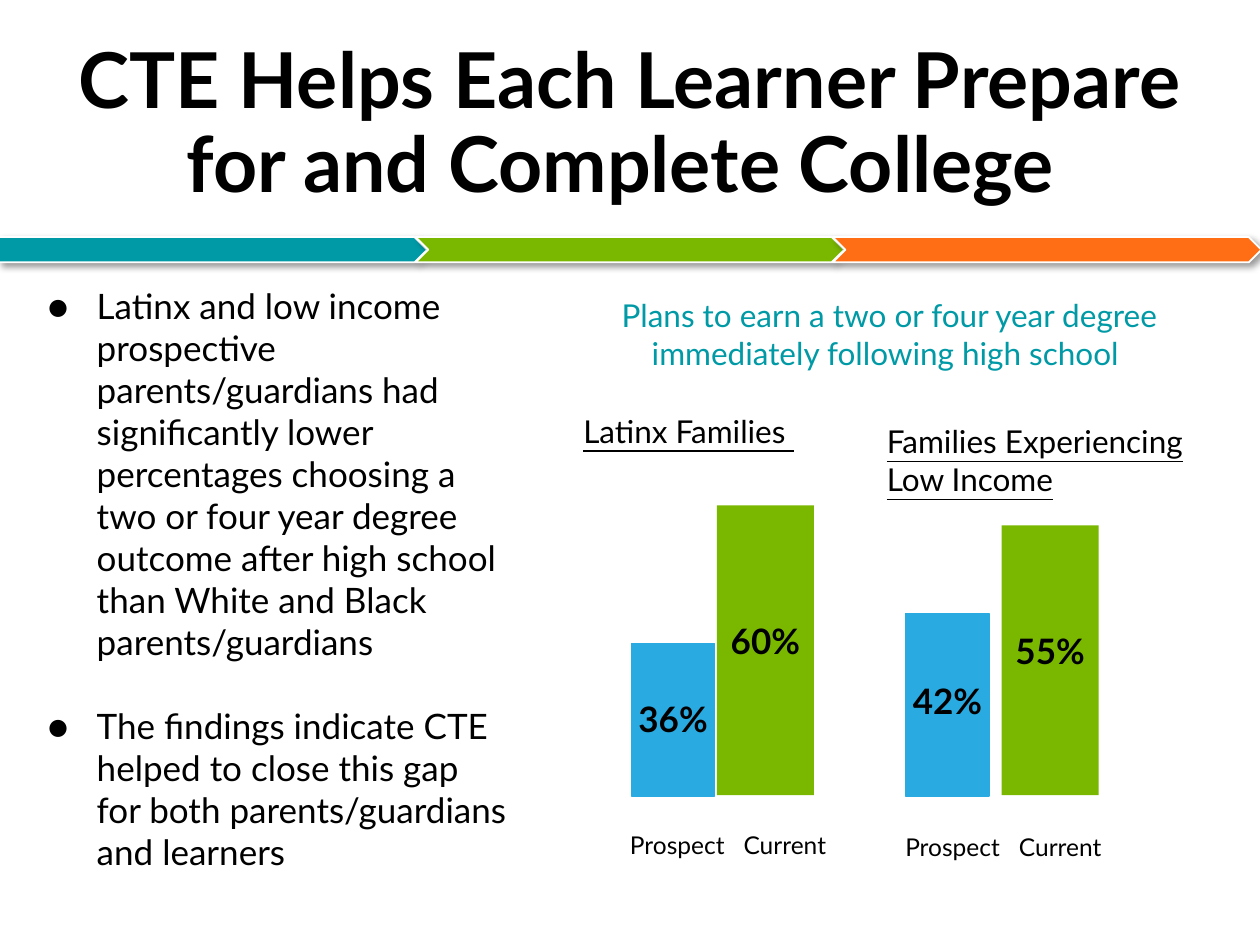
from lxml.etree import SubElement
from pptx import Presentation
from pptx.dml.color import RGBColor
from pptx.enum.shapes import MSO_SHAPE as Shape
from pptx.enum.text import MSO_ANCHOR as Anchor, MSO_AUTO_SIZE as AutoSize, PP_ALIGN as Align
from pptx.oxml.ns import qn
from pptx.util import Cm, Pt

FONT = "Lato"
COLORS = {
    "text": "000000",
    "white": "FFFFFF",
    "teal": "009AA6",
    "green": "7AB800",
    "orange": "FF6D14",
    "blue": "29ABE2",
}
TITLE = "CTE Helps Each Learner Prepare for and Complete College "
FINDINGS = [
    "Latinx and low income prospective parents/guardians had significantly lower "
    "percentages choosing a two or four year degree outcome after high school than "
    "White and Black parents/guardians",
    "The findings indicate CTE helped to close this gap for both parents/guardians "
    "and learners",
]
PLANS = "Plans to earn a two or four year degree immediately following high school "
VALUE_WIDTH = 2.18

# Bars: left, top, width, height, colour, value, top of the value (cm)
BARS = [
    (12.73, 12.98, 1.68, 3.07, "blue", "36%", 13.82),
    (14.45, 10.19, 1.96, 5.84, "green", "60%", 12.24),
    (18.26, 12.37, 1.68, 3.68, "blue", "42%", 13.44),
    (20.19, 10.59, 1.96, 5.44, "green", "55%", 12.45),
]


def color(name):
    return RGBColor.from_string(COLORS[name])


def place(shape, left, top, width, height):
    shape.left, shape.top = Cm(left), Cm(top)
    shape.width, shape.height = Cm(width), Cm(height)


def set_insets(frame, side, vertical):
    frame.margin_left = frame.margin_right = Cm(side)
    frame.margin_top = frame.margin_bottom = Cm(vertical)


def add_span(para, text, size, tint="text", bold=False, underline=False):
    span = para.add_run()
    span.text = text
    span.font.name, span.font.size = FONT, Pt(size)
    span.font.bold, span.font.underline = bold, underline
    span.font.color.rgb = color(tint)


def add_text(page, area, text, size, align=Align.LEFT, **style):
    box = page.shapes.add_textbox(*map(Cm, area))
    frame = box.text_frame
    frame.word_wrap = True
    set_insets(frame, 0.25, 0.25)
    para = frame.paragraphs[0]
    para.alignment = align
    add_span(para, text, size, **style)
    return para


def add_block(page, kind, area, fill, line=None, weight=0.75):
    block = page.shapes.add_shape(kind, *map(Cm, area))
    block.shadow.inherit = False
    block.fill.solid()
    block.fill.fore_color.rgb = color(fill)
    if line:
        block.line.color.rgb = color(line)
        block.line.width = Pt(weight)
    else:
        block.line.fill.background()
    return block


def add_shadow(shape):
    effects = shape._element.spPr.find(qn("a:effectLst"))
    shadow = SubElement(effects, qn("a:outerShdw"), blurRad=str(Pt(4)), dist=str(Pt(3)),
                        dir="2700000", algn="tl", rotWithShape="0")
    tint = SubElement(shadow, qn("a:srgbClr"), val=COLORS["text"])
    SubElement(tint, qn("a:alpha"), val="40000")


def add_bullet(para):
    props = para._p.get_or_add_pPr()
    props.set("marL", str(Cm(1.27)))
    props.set("indent", str(Cm(-0.99)))
    bullet_color = SubElement(props, qn("a:buClr"))
    SubElement(bullet_color, qn("a:srgbClr"), val=COLORS["text"])
    SubElement(props, qn("a:buFont"), typeface=FONT)
    SubElement(props, qn("a:buChar"), char="●")


def add_tab(para, position):
    tabs = SubElement(para._p.get_or_add_pPr(), qn("a:tabLst"))
    SubElement(tabs, qn("a:tab"), pos=str(Cm(position)), algn="l")


def fill_title(page):
    title = page.shapes.title
    place(title, 0.71, 0.69, 23.98, 3.68)
    frame = title.text_frame
    frame.auto_size = AutoSize.NONE
    frame.vertical_anchor = Anchor.MIDDLE
    set_insets(frame, 0.25, 0.13)
    para = frame.paragraphs[0]
    para.alignment, para.line_spacing = Align.CENTER, 0.9
    add_span(para, TITLE, 44, bold=True)


def fill_findings(page):
    body = page.placeholders[1]
    place(body, 0.43, 5.49, 10.03, 12.5)
    frame = body.text_frame
    frame.auto_size = AutoSize.NONE
    frame.vertical_anchor = Anchor.TOP
    set_insets(frame, 0.25, 0.25)
    for index, finding in enumerate(FINDINGS):
        para = frame.add_paragraph() if index else frame.paragraphs[0]
        add_bullet(para)
        para.space_before = Pt(24 if index else 0)
        para.alignment = Align.LEFT
        add_span(para, finding, 20)


def add_band(page):
    kinds = [Shape.PENTAGON, Shape.CHEVRON, Shape.CHEVRON]
    for index, (kind, fill) in enumerate(zip(kinds, ["teal", "green", "orange"])):
        area = (-0.03 + 8.41 * index, 4.78, 8.64, 0.51)
        add_shadow(add_block(page, kind, area, fill, "white", 1))


def add_bar(page, left, top, width, height, fill, value, value_top):
    outline = fill if fill == "blue" else None
    add_block(page, Shape.RECTANGLE, (left, top, width, height), fill, outline)
    value_left = left + (width - VALUE_WIDTH) / 2
    add_text(page, (value_left, value_top, VALUE_WIDTH, 1.37), value, 20,
             Align.CENTER, bold=True)


def add_axis_labels(page, left, top):
    para = add_text(page, (left, top, 4.7, 1.12), "Prospect\tCurrent", 14)
    add_tab(para, 2.29)


def main():
    deck = Presentation()
    deck.slide_width, deck.slide_height = Cm(25.4), Cm(19.05)
    page = deck.slides.add_slide(deck.slide_layouts[1])

    # Title, coloured band and findings
    fill_title(page)
    add_band(page)
    fill_findings(page)

    # Headings of the bars
    add_text(page, (10.82, 5.72, 14.22, 2.06), PLANS, 18, Align.CENTER, tint="teal")
    add_text(page, (11.51, 8.05, 5.74, 1.27), "Latinx Families ", 18, underline=True)
    add_text(page, (17.63, 8.26, 7.19, 2.06), "Families Experiencing Low Income", 18,
             underline=True)

    # Bars and their labels
    for bar in BARS:
        add_bar(page, *bar)
    add_axis_labels(page, 12.45, 16.48)
    add_axis_labels(page, 18, 16.52)

    deck.save("out.pptx")


if __name__ == "__main__":
    main()
